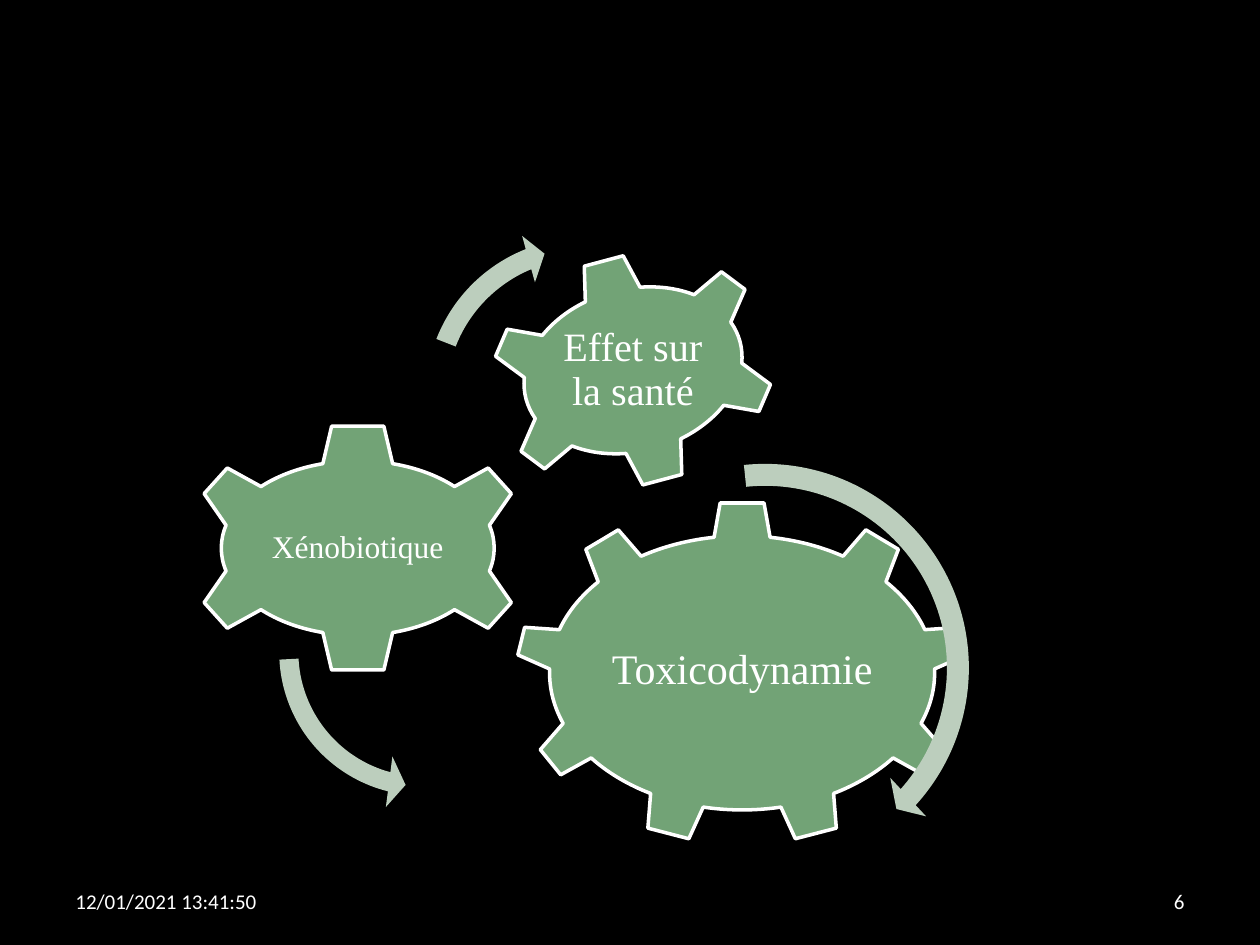
from dataclasses import dataclass

from lxml import etree
from pptx import Presentation
from pptx.dml.color import RGBColor
from pptx.enum.shapes import MSO_SHAPE
from pptx.enum.text import MSO_ANCHOR, PP_ALIGN
from pptx.util import Pt

GEAR_SIX, GEAR_NINE = MSO_SHAPE.GEAR_6, MSO_SHAPE.GEAR_9
ARROW, LEFT_ARROW = MSO_SHAPE.CIRCULAR_ARROW, MSO_SHAPE.LEFT_CIRCULAR_ARROW
MIDDLE = MSO_ANCHOR.MIDDLE
LEFT, CENTER, RIGHT = PP_ALIGN.LEFT, PP_ALIGN.CENTER, PP_ALIGN.RIGHT


@dataclass(frozen=True)
class Theme:
    """Colours, fonts and type sizes of the slide."""
    background: RGBColor = RGBColor(0, 0, 0)
    gear: RGBColor = RGBColor(0x72, 0xA3, 0x76)
    arrow: RGBColor = RGBColor(0xBC, 0xCE, 0xBD)
    light: RGBColor = RGBColor(255, 255, 255)
    gear_font: str = "Times New Roman"
    footer_font: str = "Calibri"
    large: int = 24
    medium: int = 23
    small: int = 18
    footer: int = 12


THEME = Theme()

GEARS = [
    ("Toxicodynamie", GEAR_NINE, (191, 160.6, 259.2, 195.8), (164.2, 100.8), 0, THEME.large, 1.4),
    ("Xénobiotique", GEAR_SIX, (1.6, 115.9, 198.7, 142.6), (110.9, 70.6), 0, THEME.small, 0),
    ("Effet sur la santé", GEAR_SIX, (175.1, 19.4, 166.3, 132.5), (89.3, 78.5), 345, THEME.medium, 0),
]
ARROWS = [
    (ARROW, (208.3, 130.3, 250.6), 0, (0.05, 2.99, 25.24, 158.45, 0.06)),
    (LEFT_ARROW, (47, 155.5, 182.2), 289.7, (0.06, 4.3, 104.89, 148.38, 0.08)),
    (ARROW, (131.9, 2.2, 196.6), 26.1, (0.06, 3.94, 133.14, 105.08, 0.07)),
]


def add_label(shapes, box, text, font, size, alignment, margin=None):
    """Add a vertically centred, wrapping text box."""
    label = shapes.add_textbox(*map(Pt, box))
    frame = label.text_frame
    frame.word_wrap = True
    frame.vertical_anchor = MIDDLE
    if margin is not None:
        frame.margin_left = frame.margin_right = Pt(margin)
        frame.margin_top = frame.margin_bottom = Pt(margin)
    frame.text = text
    para = frame.paragraphs[0]
    para.alignment = alignment
    span = para.runs[0]
    span.font.name = font
    span.font.size = Pt(size)
    span.font.color.rgb = THEME.light
    return para


def add_gear(shapes, text, kind, box, label_size, rotation, size, lift):
    """Add a gear with its upright label centred on it."""
    left, top, width, height = box
    gear = shapes.add_shape(kind, *map(Pt, box))
    gear.rotation = rotation
    gear.shadow.inherit = False
    gear.fill.solid()
    gear.fill.fore_color.rgb = THEME.gear
    gear.line.color.rgb = THEME.light
    gear.line.width = Pt(2)
    label_width, label_height = label_size
    label_box = (left + (width - label_width) / 2,
                 top + (height - label_height) / 2 - lift,
                 label_width, label_height)
    para = add_label(shapes, label_box, text, THEME.gear_font, size, CENTER, 2.2)
    para.line_spacing = 0.9


def add_arrow(shapes, kind, box, rotation, adjustments):
    """Add a borderless curved arrow in a square box."""
    left, top, side = box
    arrow = shapes.add_shape(kind, Pt(left), Pt(top), Pt(side), Pt(side))
    arrow.rotation = rotation
    arrow.shadow.inherit = False
    arrow.fill.solid()
    arrow.fill.fore_color.rgb = THEME.arrow
    arrow.line.fill.background()
    for index, value in enumerate(adjustments):
        arrow.adjustments[index] = value


def add_gear_train(page, left, top):
    """Group the gears and their turning arrows from the given corner."""
    shapes = page.shapes.add_group_shape().shapes
    for text, kind, (x, y, width, height), *rest in GEARS:
        add_gear(shapes, text, kind, (left + x, top + y, width, height), *rest)
    for kind, (x, y, side), *rest in ARROWS:
        add_arrow(shapes, kind, (left + x, top + y, side), *rest)


def add_footer(page, left, top, width, height):
    """Place the date and the page number at the two ends of the box."""
    part_width = 168
    for x, text, alignment in (
        (left, "12/01/2021 13:41:50", LEFT),
        (left + width - part_width, "6", RIGHT),
    ):
        add_label(page.shapes, (x, top, part_width, height), text,
                  THEME.footer_font, THEME.footer, alignment)


def main():
    """Build and save the slide."""
    deck = Presentation()
    deck.slide_width, deck.slide_height = Pt(720), Pt(540)
    page = deck.slides.add_slide(deck.slide_layouts[6])
    page.background.fill.solid()
    page.background.fill.fore_color.rgb = THEME.background
    add_gear_train(page, 103.5, 126)
    add_footer(page, 36, 500.4, 648, 28.8)
    deck.save("out.pptx")


if __name__ == "__main__":
    main()
